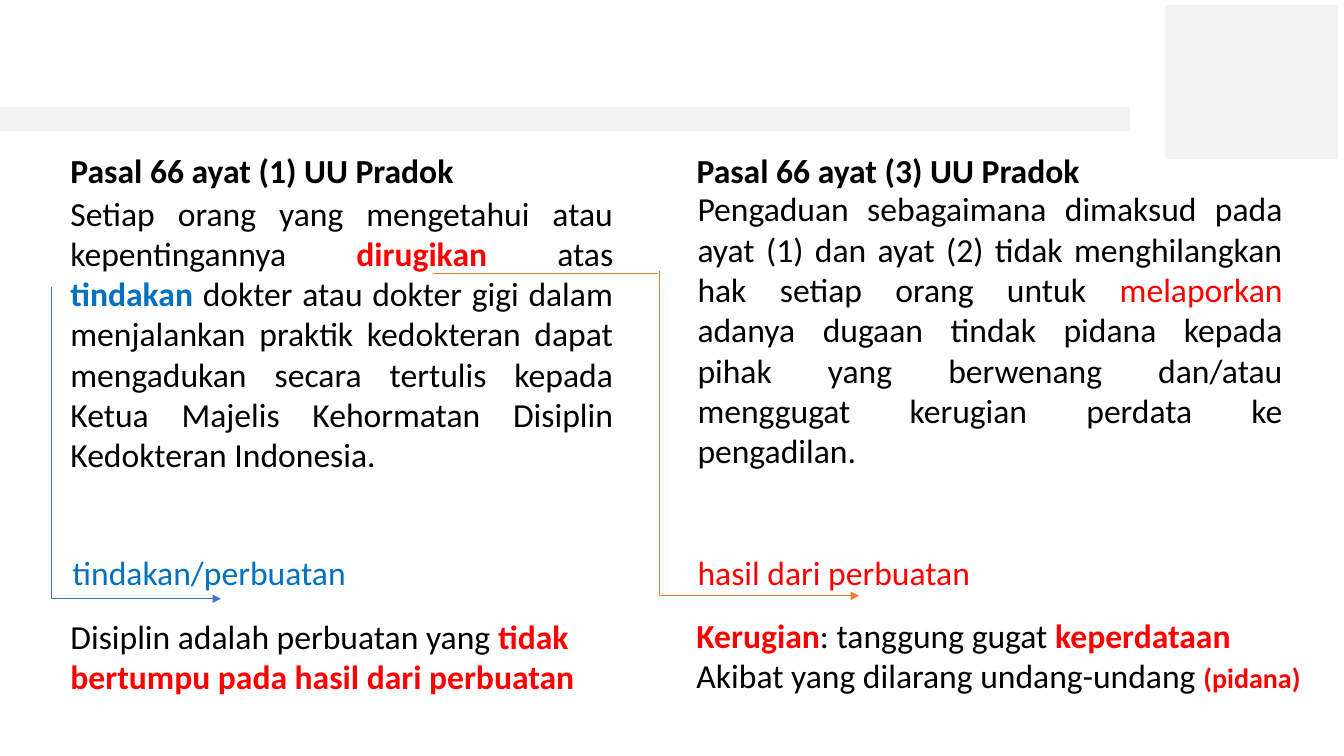
from lxml import etree
from pptx import Presentation
from pptx.dml.color import RGBColor
from pptx.enum.shapes import MSO_CONNECTOR as Connector, MSO_SHAPE as Shape
from pptx.enum.text import MSO_AUTO_SIZE as AutoSize, PP_ALIGN as Align
from pptx.oxml.ns import qn
from pptx.util import Inches, Pt

BLACK, RED, BLUE, GREY = "000000", "FF0000", "0070C0", "F2F2F2"
LEFT, RIGHT = 0.6, 6.81

deck = Presentation()
deck.slide_width, deck.slide_height = Inches(13.33), Inches(7.5)
page = deck.slides.add_slide(deck.slide_layouts[6])


def add_text(paragraphs, left, top, width, height, align=Align.LEFT):
    """Each paragraph is a list of (text, colour, bold, size); the last two may be left out."""
    box = page.shapes.add_textbox(Inches(left), Inches(top), Inches(width), Inches(height))
    frame = box.text_frame
    frame.word_wrap = True
    frame.auto_size = AutoSize.SHAPE_TO_FIT_TEXT
    for index, spans in enumerate(paragraphs):
        para = frame.paragraphs[0] if index == 0 else frame.add_paragraph()
        para.alignment = align
        for text, colour, *style in spans:
            bold, size = (style + [False, 24][len(style):])
            span = para.add_run()
            span.text = text
            span.font.name = "Calibri"
            span.font.size = Pt(size)
            span.font.bold = bold
            span.font.color.rgb = RGBColor.from_string(colour)


def add_line(kind, colour, *ends):
    line = page.shapes.add_connector(kind, *[Inches(value) for value in ends])
    line.line.color.rgb = RGBColor.from_string(colour)
    line.line.width = Pt(0.5)
    etree.SubElement(line._element.spPr, qn("a:effectLst"))
    return line


# Header bar and corner block
for bounds in [(0, 1.06, 11.21, 0.24), (11.56, 0.05, 1.71, 1.53)]:
    block = page.shapes.add_shape(Shape.RECTANGLE, *[Inches(value) for value in bounds])
    block.shadow.inherit = False
    block.fill.solid()
    block.fill.fore_color.rgb = RGBColor.from_string(GREY)
    block.line.fill.background()

# Articles of the law
add_text([[
    ("Setiap orang yang mengetahui atau kepentingannya ", BLACK),
    ("dirugikan", RED, True),
    (" atas ", BLACK),
    ("tindakan", BLUE, True),
    (" dokter atau dokter gigi dalam menjalankan praktik kedokteran dapat mengadukan "
     "secara tertulis kepada Ketua Majelis Kehormatan Disiplin Kedokteran Indonesia.", BLACK),
]], LEFT, 1.86, 5.58, 2.93, align=Align.JUSTIFY)
add_text([[
    ("Pengaduan sebagaimana dimaksud pada ayat (1) dan ayat (2) tidak menghilangkan "
     "hak setiap orang untuk ", BLACK),
    ("melaporkan", RED),
    (" adanya dugaan tindak pidana kepada pihak yang berwenang dan/atau menggugat "
     "kerugian perdata ke pengadilan.", BLACK),
]], 6.82, 1.82, 6, 2.93, align=Align.JUSTIFY)
for left, verse in [(LEFT, 1), (RIGHT, 3)]:
    add_text([[(f"Pasal 66 ayat ({verse}) UU Pradok", BLACK, True)]], left, 1.44, 4.52, 0.5)

# What each arrow points to
add_text([[("tindakan/perbuatan", BLUE)]], 0.62, 5.43, 3.11, 0.51)
add_text([[("hasil dari perbuatan", RED)]], 6.82, 5.43, 5.58, 0.51)

# Arrows that run down and then right: a mirrored elbow turned by 270 degrees
for colour, left, top, right, bottom in [
    ("4472C4", 0.51, 2.85, 2.19, 5.94),
    ("ED7D31", 6.54, 2.69, 8.52, 5.91),
]:
    middle_x, middle_y = (left + right) / 2, (top + bottom) / 2
    half_drop, half_run = (bottom - top) / 2, (right - left) / 2
    arrow = add_line(Connector.ELBOW, colour, middle_x + half_drop, middle_y - half_run,
                     middle_x - half_drop, middle_y + half_run)
    properties = arrow._element.spPr
    properties.find(qn("a:xfrm")).set("rot", str(270 * 60000))
    adjustments = properties.find(qn("a:prstGeom")).get_or_add_avLst()
    etree.SubElement(adjustments, qn("a:gd"), name="adj1", fmla="val 100000")
    etree.SubElement(properties.find(qn("a:ln")), qn("a:tailEnd"), type="triangle")
add_line(Connector.STRAIGHT, "ED7D31", 6.53, 2.71, 4.29, 2.71)

# Conclusions
add_text([
    [("Kerugian", RED, True), (": tanggung gugat ", BLACK), ("keperdataan", RED, True)],
    [("Akibat yang dilarang undang-undang ", BLACK), ("(pidana)", RED, True, 20)],
], RIGHT, 6.05, 6.37, 0.91)
add_text([[
    ("Disiplin adalah perbuatan yang ", BLACK),
    ("tidak bertumpu pada hasil dari perbuatan", RED, True),
]], LEFT, 6.06, 5.78, 0.91)

deck.save("out.pptx")
